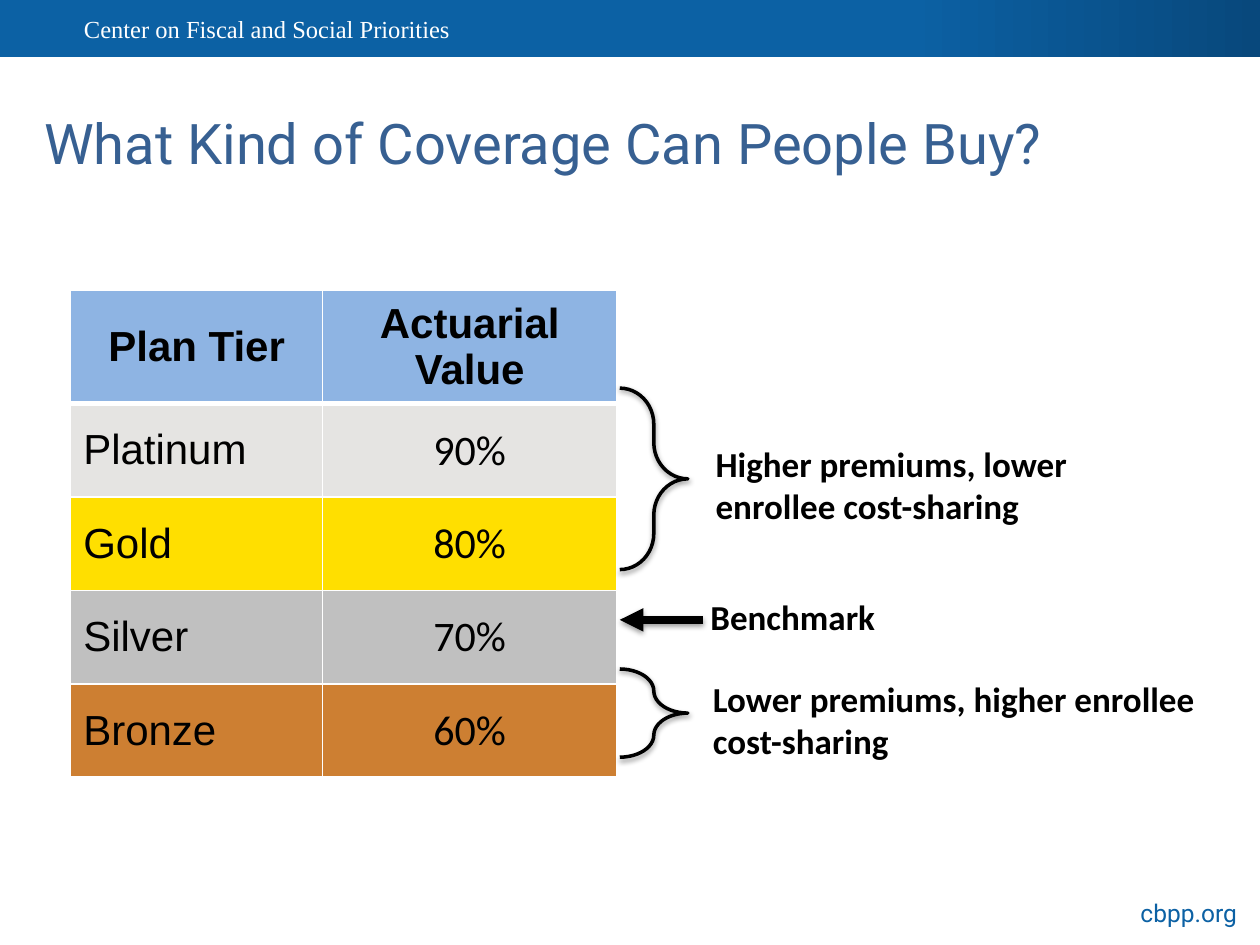
"""Build a slide on health plan tiers, their actuarial values and cost trade-offs."""
import pptx
import pptx.dml.color
import pptx.enum.shapes
import pptx.enum.text
import pptx.oxml
import pptx.oxml.ns
import pptx.util

Pt = pptx.util.Pt
Shape = pptx.enum.shapes.MSO_SHAPE
Align = pptx.enum.text.PP_ALIGN
Anchor = pptx.enum.text.MSO_ANCHOR
Auto = pptx.enum.text.MSO_AUTO_SIZE
NS = pptx.oxml.ns.nsdecls("a")
COLORS = {
    "blue": "0C61A4", "navy": "08487C", "title": "376092", "head": "8EB4E3",
    "Platinum": "E5E4E2", "Gold": "FFDF00", "Silver": "C0C0C0",
    "Bronze": "CD7F32", "black": "000000", "white": "FFFFFF",
}
SHADOW = (
    f'<a:effectLst {NS}><a:outerShdw blurRad="{Pt(3.1)}" dist="{Pt(1.6)}" '
    'dir="5400000" rotWithShape="0"><a:srgbClr val="000000">'
    '<a:alpha val="38000"/></a:srgbClr></a:outerShdw></a:effectLst>'
)


def color(name):
    return pptx.dml.color.RGBColor.from_string(COLORS[name])


def write(frame, text, size, face, tint, bold=False, align=Align.LEFT):
    frame.word_wrap = True
    para = frame.paragraphs[0]
    para.text = text
    para.alignment = align
    para.font.size = Pt(size)
    para.font.name = face
    para.font.bold = bold
    para.font.color.rgb = color(tint)


deck = pptx.Presentation()
deck.slide_width, deck.slide_height = Pt(720), Pt(540)
slide = deck.slides.add_slide(deck.slide_layouts[5])
shapes = slide.shapes

band = shapes.add_shape(Shape.RECTANGLE, Pt(0), Pt(0), Pt(720), Pt(32.4))
band.shadow.inherit = False
band.line.fill.background()
band.fill.gradient()
band.fill.gradient_angle = 0
for stop, place, name in zip(band.fill.gradient_stops, (0.72, 1), ("blue", "navy")):
    stop.position = place
    stop.color.rgb = color(name)

owner = shapes.add_textbox(Pt(48), Pt(4.3), Pt(440), Pt(30)).text_frame
owner.margin_left = owner.margin_right = 0
write(owner, "Center on Fiscal and Social Priorities", 14, "Times New Roman", "white")

site = shapes.add_textbox(Pt(606), Pt(509.8), Pt(108), Pt(24.5)).text_frame
write(site, "cbpp.org", 14, "Roboto", "blue", align=Align.RIGHT)

title = shapes.title
title.left, title.top, title.width, title.height = Pt(18), Pt(48), Pt(684), Pt(66)
title.text_frame.vertical_anchor = Anchor.MIDDLE
write(title.text_frame, "What Kind of Coverage Can People Buy?", 32, "Roboto", "title")

rows = [
    ("Plan Tier", "Actuarial Value"),
    ("Platinum", "90%"), ("Gold", "80%"), ("Silver", "70%"), ("Bronze", "60%"),
]
frame = shapes.add_table(len(rows), 2, Pt(40.4), Pt(165.8), Pt(312), Pt(267))
table = frame.table
table.horz_banding = False
table.columns[0].width, table.columns[1].width = Pt(144), Pt(168)
for r, row in enumerate(rows):
    table.rows[r].height = Pt(53.4)
    for c, text in enumerate(row):
        cell = table.cell(r, c)
        cell.vertical_anchor = Anchor.MIDDLE
        value = r > 0 and c == 1
        if value:
            cell.margin_left = cell.margin_right = cell.margin_top = Pt(0.7)
            cell.margin_bottom = 0
        props = cell._tc.get_or_add_tcPr()
        for side in "LRTB":
            wide = 3 if (r, side) in ((0, "B"), (1, "T")) else 1
            props.append(pptx.oxml.parse_xml(
                f'<a:ln{side} {NS} w="{Pt(wide)}"><a:solidFill>'
                f'<a:srgbClr val="{COLORS["white"]}"/></a:solidFill></a:ln{side}>'))
        cell.fill.solid()
        cell.fill.fore_color.rgb = color(row[0] if r else "head")
        write(cell.text_frame, text, 24, "Calibri" if value else "Arial", "black",
              bold=r == 0, align=Align.CENTER if r == 0 or c else Align.LEFT)

marks = []
for top, height in ((221.8, 103.7), (382.3, 50.4)):
    brace = shapes.add_shape(Shape.RIGHT_BRACE, Pt(354.2), Pt(top), Pt(38.9), Pt(height))
    brace.adjustments[0] = 0.531
    brace.adjustments[1] = 0.5
    brace.fill.background()
    brace.line.width = Pt(2)
    marks.append(brace)

arrow = shapes.add_connector(
    pptx.enum.shapes.MSO_CONNECTOR.STRAIGHT, Pt(401.8), Pt(354.2), Pt(354.2), Pt(354.2))
arrow.line.width = Pt(4.5)
marks.append(arrow)
for mark in marks:
    mark.line.color.rgb = color("black")
    mark._element.spPr.append(pptx.oxml.parse_xml(SHADOW))
arrow.line._get_or_add_ln().append(pptx.oxml.parse_xml(f'<a:tailEnd {NS} type="triangle"/>'))

notes = [
    ("Higher premiums, lower enrollee cost-sharing", 401.8, 249.1, 282.2, 55.4),
    ("Lower premiums, higher enrollee cost-sharing", 400.3, 383.8, 319.7, 55.4),
    ("Benchmark", 398.9, 337, 193.7, 31.7),
]
for text, *spot in notes:
    note = shapes.add_textbox(*map(Pt, spot))
    note.fill.solid()
    note.fill.fore_color.rgb = color("white")
    note.text_frame.auto_size = Auto.SHAPE_TO_FIT_TEXT
    write(note.text_frame, text, 20, "Calibri", "black", bold=True)
arrow._element.getparent().append(arrow._element)

deck.save("out.pptx")
